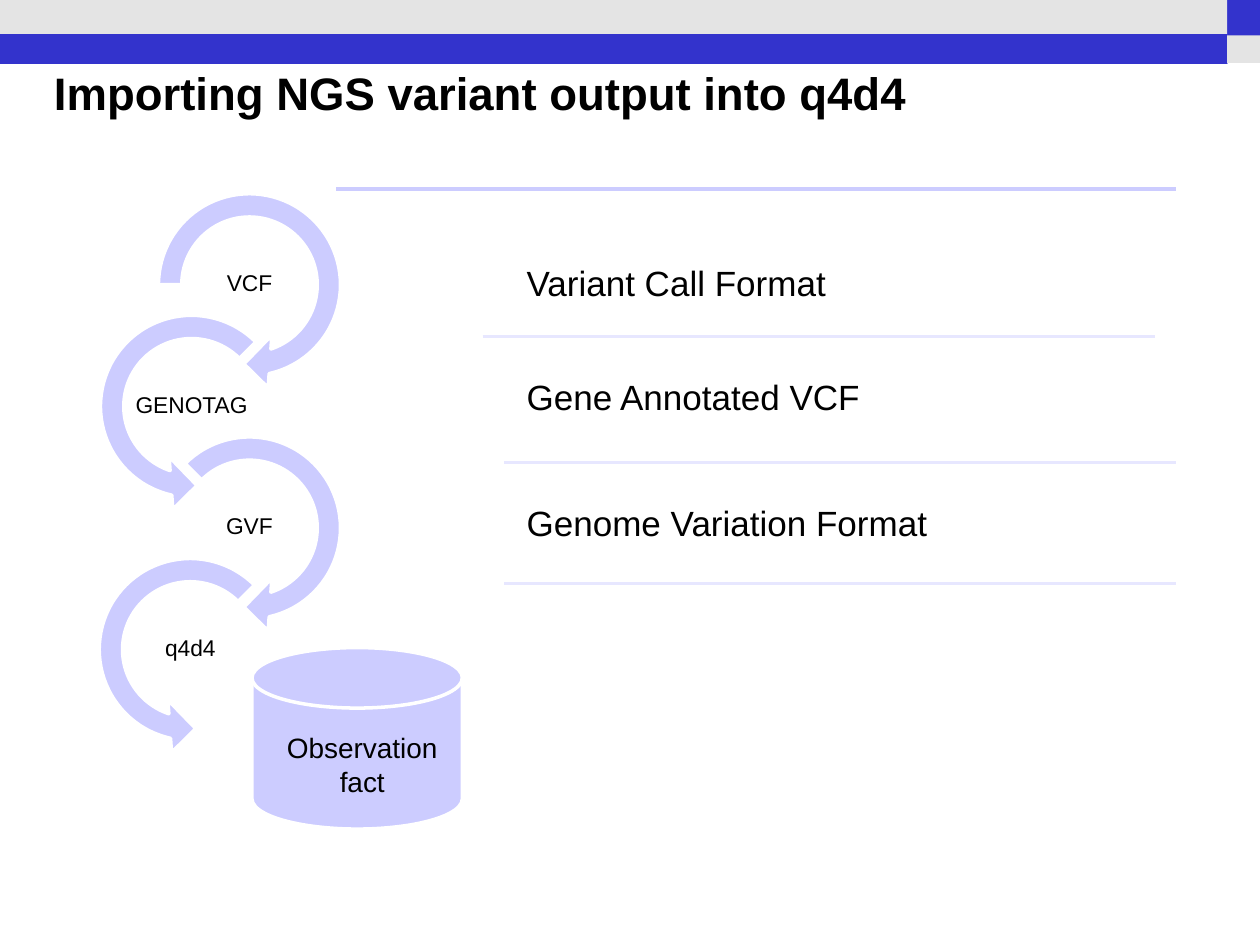
import dataclasses

import pptx
import pptx.dml.color
import pptx.enum.shapes
import pptx.enum.text
import pptx.oxml
import pptx.util

Inches = pptx.util.Inches
Shape = pptx.enum.shapes.MSO_SHAPE
Align = pptx.enum.text.PP_ALIGN
Anchor = pptx.enum.text.MSO_ANCHOR
EFFECTS = '<a:effectLst xmlns:a="http://schemas.openxmlformats.org/drawingml/2006/main"/>'


@dataclasses.dataclass(frozen=True)
class Theme:
    font: str = "Arial"
    text: str = "000000"
    white: str = "FFFFFF"
    blue: str = "3333CC"
    gray: str = "E4E4E4"
    lavender: str = "CCCCFF"
    pale: str = "E7E7FF"
    title_size: int = 26
    format_size: int = 20
    store_size: int = 16
    step_size: int = 13
    outline: int = 2


def color(value):
    return pptx.dml.color.RGBColor.from_string(value)


class PageBuilder:
    def __init__(self, page, theme):
        self.page = page
        self.theme = theme

    def shape(self, kind, box, fill, line=None, width=1, adjustments=()):
        item = self.page.shapes.add_shape(kind, *map(Inches, box))
        item.shadow.inherit = False
        item.fill.solid()
        item.fill.fore_color.rgb = color(fill)
        if line:
            item.line.color.rgb = color(line)
            item.line.width = pptx.util.Pt(width)
        else:
            item.line.fill.background()
        for index, value in enumerate(adjustments):
            item.adjustments[index] = value

    def text(self, words, box, size, bold=False, align=Align.LEFT,
             anchor=Anchor.TOP, inset=None, spacing=None, wrap=True):
        frame = self.page.shapes.add_textbox(*map(Inches, box)).text_frame
        frame.text = words
        frame.word_wrap = wrap
        frame.vertical_anchor = anchor
        if inset is not None:
            frame.margin_left = frame.margin_right = Inches(inset)
            frame.margin_top = frame.margin_bottom = Inches(inset)
        for para in frame.paragraphs:
            para.alignment = align
            para.line_spacing = spacing
            for span in para.runs:
                span.font.name = self.theme.font
                span.font.size = pptx.util.Pt(size)
                span.font.bold = bold
                span.font.color.rgb = color(self.theme.text)

    def rule(self, left, right, top, line):
        item = self.page.shapes.add_connector(
            pptx.enum.shapes.MSO_CONNECTOR.STRAIGHT,
            Inches(left), Inches(top), Inches(right), Inches(top))
        item.line.color.rgb = color(line)
        item.line.width = pptx.util.Pt(self.theme.outline)
        item._element.spPr.append(pptx.oxml.parse_xml(EFFECTS))

    def arrow(self, kind, left, top, start, end):
        self.shape(kind, (left, top, 1.68, 1.68), self.theme.lavender,
                   self.theme.white, self.theme.outline,
                   (0.11, 11.423, end, start, 0.125))

    def step_label(self, words, left, top):
        self.text(words, (left, top, 0.94, 0.47), self.theme.step_size,
                  align=Align.CENTER, anchor=Anchor.MIDDLE,
                  inset=0.01, spacing=0.9)


def main():
    deck = pptx.Presentation()
    deck.slide_width, deck.slide_height = Inches(10), Inches(7.5)
    theme = Theme()
    builder = PageBuilder(deck.slides.add_slide(deck.slide_layouts[6]), theme)

    split = 9.74
    builder.shape(Shape.RECTANGLE, (split, 0, 0.26, 0.37), theme.blue)
    builder.shape(Shape.RECTANGLE, (0, 0, split, 0.37), theme.gray)
    builder.shape(Shape.RECTANGLE, (0, 0.28, split, 0.22), theme.blue, theme.blue)
    builder.shape(Shape.RECTANGLE, (split, 0.28, 0.26, 0.22), theme.gray)
    builder.text("Importing NGS variant output into q4d4", (0.33, 0.42, 9.08, 0.58),
                 theme.title_size, bold=True, anchor=Anchor.BOTTOM)

    right, left = Shape.CIRCULAR_ARROW, Shape.LEFT_CIRCULAR_ARROW
    steps = [
        ("VCF", right, 1.14, 108, 45),
        ("GENOTAG", left, 0.68, 189, 63),
        ("GVF", right, 1.14, 135, 45),
        ("q4d4", left, 0.67, 189, 63),
    ]
    step_top, step_pitch = 1.42, 0.965
    builder.shape(Shape.FLOWCHART_MAGNETIC_DISK, (2, 5.14, 1.67, 1.44),
                  theme.lavender, theme.white, theme.outline)
    for index, (words, kind, x, start, end) in enumerate(steps):
        y = step_top + index * step_pitch
        builder.arrow(kind, x, y, start, end)
        builder.step_label(words, x + 0.37, y + 0.6)
    builder.text("Observation\nfact", (2.17, 5.75, 1.41, 0.64), theme.store_size,
                 align=Align.CENTER, wrap=False)

    builder.rule(2.67, 9.33, 1.5, theme.lavender)
    formats = [
        ("Variant Call Format", 2.03, 3.83, 9.17, 2.67),
        ("Gene Annotated VCF", 2.94, 4, 9.33, 3.67),
        ("Genome Variation Format", 3.94, 4, 9.33, 4.63),
    ]
    for words, text_top, rule_left, rule_right, rule_top in formats:
        builder.text(words, (4.1, text_top, 5.23, 1.39), theme.format_size,
                     inset=0.08, spacing=0.9)
        builder.rule(rule_left, rule_right, rule_top, theme.pale)

    deck.save("out.pptx")


if __name__ == "__main__":
    main()
